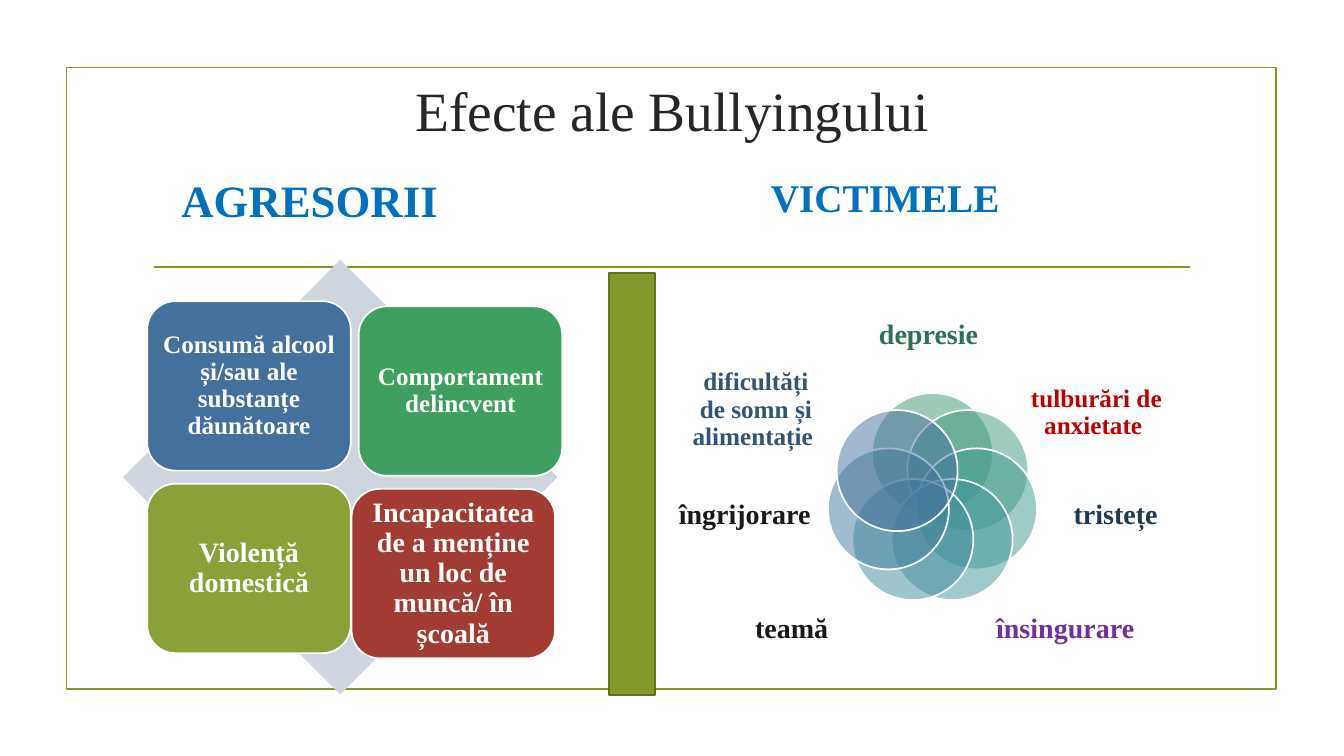
from dataclasses import dataclass
from math import cos, pi, sin

from pptx import Presentation
from pptx import util as u
from pptx.dml.color import RGBColor
from pptx.enum import shapes, text
from pptx.oxml import ns, xmlchemy

Cm, Pt = u.Cm, u.Pt
Kind = shapes.MSO_SHAPE


@dataclass(frozen=True)
class Theme:
    font: str = "Times New Roman"
    olive: str = "83992A"
    moss: str = "61711F"
    ink: str = "262626"
    blue: str = "0070C0"
    pale: str = "CFD5DF"
    white: str = "FFFFFF"
    title: float = 39.6
    head: int = 32
    subhead: int = 28
    large: int = 20
    small: int = 18
    line: float = 1.25


T = Theme()

CARDS = [
    (0.61, 1.04, "44709D", T.small, "Consumă alcool și/sau ale substanțe dăunătoare"),
    (5.94, 1.17, "3E9F61", T.small, "Comportament delincvent"),
    (0.61, 5.64, "89A138", T.large, "Violență domestică"),
    (5.76, 5.77, "A23C33", T.large, "Incapacitatea de a menține un loc de muncă/ în școală"),
]

PETALS = [
    ("3C9770", "2D7154", T.large, (5, 0, 3.5, 1.88), "depresie "),
    ("3D987F", "C00000", T.small, (9.24, 1.85, 3.3, 2.06), "tulburări de anxietate "),
    ("3F998E", "22384E", T.large, (9.85, 4.39, 3.23, 2.18), "tristețe "),
    ("40979A", "7030A0", T.large, (8.1, 7.34, 4.19, 2.01), "însingurare "),
    ("418A9B", "191919", T.large, (1.55, 7.34, 3.5, 2.01), "teamă "),
    ("437D9C", "191919", T.large, (0, 4.39, 4.06, 2.18), "îngrijorare"),
    ("44709D", "335476", T.small, (0.66, 1.78, 3.3, 2.06), "dificultăți de somn și alimentație "),
]


def color(code):
    return RGBColor.from_string(code)


def add_shape(slide, kind, box, fill=None, line=None, alpha=None):
    shape = slide.shapes.add_shape(kind, *map(Cm, box))
    shape.shadow.inherit = False
    if fill:
        shape.fill.solid()
        shape.fill.fore_color.rgb = color(fill)
    else:
        shape.fill.background()
    if alpha:
        tint = shape._element.spPr.find(".//" + ns.qn("a:srgbClr"))
        node = xmlchemy.OxmlElement("a:alpha")
        node.set("val", str(alpha * 1000))
        tint.append(node)
    if line:
        shape.line.color.rgb = color(line)
        shape.line.width = Pt(T.line)
    else:
        shape.line.fill.background()
    return shape


def write(shape, words, size, ink, bold=True, center=True, middle=True, inset=None, lead=None):
    frame = shape.text_frame
    frame.word_wrap = True
    frame.vertical_anchor = text.MSO_ANCHOR.MIDDLE if middle else text.MSO_ANCHOR.TOP
    if inset is not None:
        frame.margin_left = frame.margin_right = Cm(inset)
        frame.margin_top = frame.margin_bottom = Cm(inset)
    para = frame.paragraphs[0]
    para.alignment = text.PP_ALIGN.CENTER if center else text.PP_ALIGN.LEFT
    if lead:
        para.line_spacing = lead
    run = para.add_run()
    run.text = words
    run.font.name = T.font
    run.font.size = Pt(size)
    run.font.bold = bold
    run.font.color.rgb = color(ink)


def add_text(slide, box, words, size, ink, **form):
    write(slide.shapes.add_textbox(*map(Cm, box)), words, size, ink, **form)


def add_frame(slide, box):
    x, y, w, h = box
    add_shape(slide, Kind.RECTANGLE, box, line=T.olive)
    rule = slide.shapes.add_connector(
        shapes.MSO_CONNECTOR.STRAIGHT,
        Cm(x + 2.21), Cm(y + 5.03), Cm(x + w - 2.16), Cm(y + 5.03))
    rule.line.color.rgb = color(T.olive)
    rule.line.width = Pt(T.line)
    rule._element.spPr.append(xmlchemy.OxmlElement("a:effectLst"))
    add_text(slide, (x + 1.93, y + 0.23, w - 3.81, 1.65),
             "Efecte ale Bullyingului", T.title, T.ink, bold=False)


def add_matrix(slide, box):
    x, y, w, h = box
    add_shape(slide, Kind.DIAMOND, box, fill=T.pale)
    for dx, dy, fill, size, words in CARDS:
        card = add_shape(slide, Kind.ROUNDED_RECTANGLE,
                         (x + dx, y + dy, 5.13, 4.27), fill, T.white)
        write(card, words, size, T.white, inset=size / 100, lead=0.9)


def add_ring(slide, box):
    x, y, w, h = box
    size, reach = 3.05, 1.14
    left, top = x + 6.76 - size / 2, y + 5.05 - size / 2
    for i, (fill, ink, points, place, words) in enumerate(PETALS):
        turn = 2 * pi * i / len(PETALS)
        spot = (left + reach * sin(turn), top - reach * cos(turn), size, size)
        add_shape(slide, Kind.OVAL, spot, fill, T.white, alpha=50)
        dx, dy, wide, high = place
        add_text(slide, (x + dx, y + dy, wide, high), words, points, ink,
                 inset=0, lead=0.9)


def main():
    deck = Presentation()
    deck.slide_width, deck.slide_height = Cm(33.87), Cm(19.05)
    slide = deck.slides.add_slide(deck.slide_layouts[6])
    add_frame(slide, (1.68, 1.7, 30.48, 15.67))
    add_text(slide, (4.32, 4.24, 8.08, 1.63), "AGRESORII", T.head, T.blue,
             center=False, middle=False)
    add_matrix(slide, (3.1, 6.55, 10.95, 10.95))
    add_shape(slide, Kind.FLOWCHART_PROCESS, (15.34, 6.88, 1.17, 10.64), T.olive, T.moss)
    add_text(slide, (19.18, 4.24, 8.64, 1.45), "VICTIMELE", T.subhead, T.blue,
             center=False, middle=False)
    add_ring(slide, (16.74, 7.52, 13.08, 9.35))
    deck.save("out.pptx")


if __name__ == "__main__":
    main()
